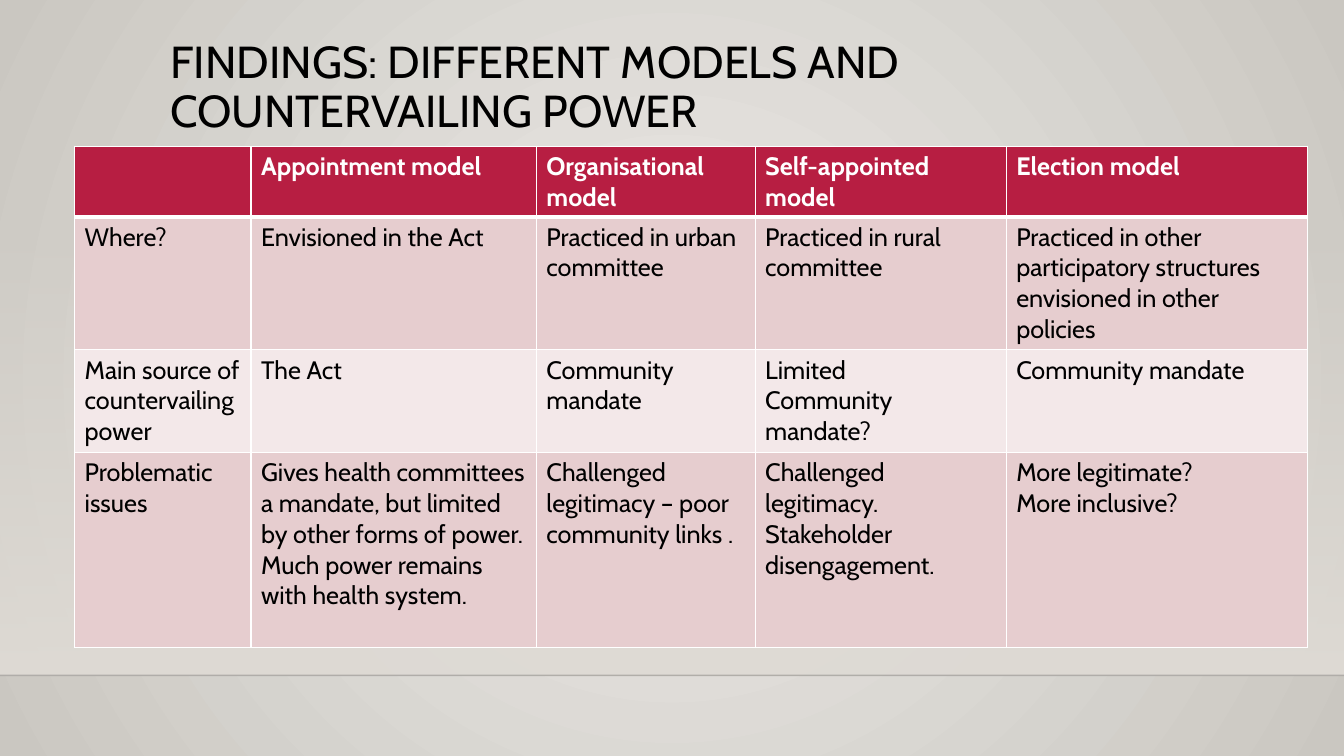
"""Builds a slide comparing four committee models in a table."""
from dataclasses import dataclass

from lxml import etree
from pptx import Presentation
from pptx.dml.color import RGBColor
from pptx.enum.shapes import MSO_CONNECTOR, MSO_SHAPE
from pptx.enum.text import MSO_ANCHOR
from pptx.oxml.ns import qn
from pptx.util import Inches, Pt

STRAIGHT = MSO_CONNECTOR.STRAIGHT
RECTANGLE = MSO_SHAPE.RECTANGLE
TOP = MSO_ANCHOR.TOP


@dataclass(frozen=True)
class Theme:
    font: str = "Cabin"
    title_size: int = 32
    table_size: int = 18
    text: str = "000000"
    white: str = "FFFFFF"
    header: str = "B71E42"
    band_dark: str = "E6CDCF"
    band_light: str = "F3E8E9"
    center: str = "ECEAE7"
    edge: str = "CAC7C1"
    wall: str = "DFDBD5"
    floor_line: str = "000001"


theme = Theme()


def set_gradient(fill, colors):
    fill.gradient()
    for position, (stop, color) in enumerate(zip(fill.gradient_stops, colors)):
        stop.position = position
        stop.color.rgb = RGBColor.from_string(color)


def add_run(paragraph, text, size, color, bold=False):
    run = paragraph.add_run()
    run.text = text
    run.font.name = theme.font
    run.font.size = Pt(size)
    run.font.bold = bold
    run.font.color.rgb = RGBColor.from_string(color)


presentation = Presentation()
presentation.slide_width = Inches(13.33)
presentation.slide_height = Inches(7.5)
slide = presentation.slides.add_slide(presentation.slide_layouts[6])

set_gradient(slide.background.fill, (theme.center, theme.edge))
gradient = slide.element.find(".//" + qn("a:gradFill"))
gradient.remove(gradient.find(qn("a:lin")))
radial = etree.SubElement(gradient, qn("a:path"), path="circle")
etree.SubElement(radial, qn("a:fillToRect"), l="50000", t="50000", r="50000", b="50000")

wall = slide.shapes.add_shape(RECTANGLE, 0, Inches(2.21), Inches(13.33), Inches(4.49))
wall.shadow.inherit = False
wall.line.fill.background()
set_gradient(wall.fill, (theme.wall, theme.wall))
wall.fill.gradient_angle = 270
clear_color = wall.element.find(".//" + qn("a:srgbClr"))
etree.SubElement(clear_color, qn("a:alpha"), val="0")

floor_line = slide.shapes.add_connector(STRAIGHT, 0, Inches(6.7), Inches(13.33), Inches(6.7))
floor_line.line.width = Pt(1)
floor_line.line.color.rgb = RGBColor.from_string(theme.floor_line)
line_color = floor_line.element.find(".//" + qn("a:srgbClr"))
etree.SubElement(line_color, qn("a:alpha"), val="20000")
etree.SubElement(floor_line.element.spPr, qn("a:effectLst"))

title = slide.shapes.add_textbox(Inches(1.59), Inches(0.35), Inches(10.5), Inches(1.67))
title.text_frame.word_wrap = True
title.text_frame.vertical_anchor = TOP
title_paragraph = title.text_frame.paragraphs[0]
title_paragraph.line_spacing = 0.9
add_run(title_paragraph, "FINDINGS: DIFFERENT MODELS AND COUNTERVAILING POWER",
        theme.title_size, theme.text)

column_widths = (1.75, 2.83, 2.17, 2.49, 2.99)
row_heights = (0.7, 1.32, 1.02, 1.93)
row_fills = (theme.header, theme.band_dark, theme.band_light, theme.band_dark)
table_rows = (
    ("", "Appointment model", "Organisational model", "Self-appointed model", "Election model"),
    ("Where?", "Envisioned in the Act", "Practiced in urban committee",
     "Practiced in rural committee",
     "Practiced in other participatory structures envisioned in other policies"),
    ("Main source of countervailing power", "The Act", "Community mandate",
     "Limited\nCommunity mandate?", "Community mandate"),
    ("Problematic issues",
     "Gives health committees a mandate, but limited by other forms of power.\n"
     "Much power remains with health system.",
     "Challenged legitimacy – poor community links .",
     "Challenged legitimacy.\nStakeholder disengagement.",
     "More legitimate?\nMore inclusive?"),
)

table = slide.shapes.add_table(
    len(row_heights), len(column_widths), Inches(0.74), Inches(1.45),
    Inches(sum(column_widths)), Inches(sum(row_heights))).table
for column, width in zip(table.columns, column_widths):
    column.width = Inches(width)

for row_index, (row, height, texts) in enumerate(zip(table.rows, row_heights, table_rows)):
    row.height = Inches(height)
    is_header = row_index == 0
    border_widths = {
        "a:lnL": 1,
        "a:lnR": 1,
        "a:lnT": 3 if row_index == 1 else 1,
        "a:lnB": 3 if is_header else 1,
    }
    for cell, text in zip(row.cells, texts):
        cell.fill.solid()
        cell.fill.fore_color.rgb = RGBColor.from_string(row_fills[row_index])
        properties = cell._tc.get_or_add_tcPr()
        for order, (tag, width) in enumerate(border_widths.items()):
            border = etree.Element(qn(tag), w=str(Pt(width)))
            border_fill = etree.SubElement(border, qn("a:solidFill"))
            etree.SubElement(border_fill, qn("a:srgbClr"), val=theme.white)
            properties.insert(order, border)
        if not text:
            continue
        for line_index, line in enumerate(text.split("\n")):
            frame = cell.text_frame
            paragraph = frame.add_paragraph() if line_index else frame.paragraphs[0]
            add_run(paragraph, line, theme.table_size,
                    theme.white if is_header else theme.text, is_header)

presentation.save("out.pptx")
